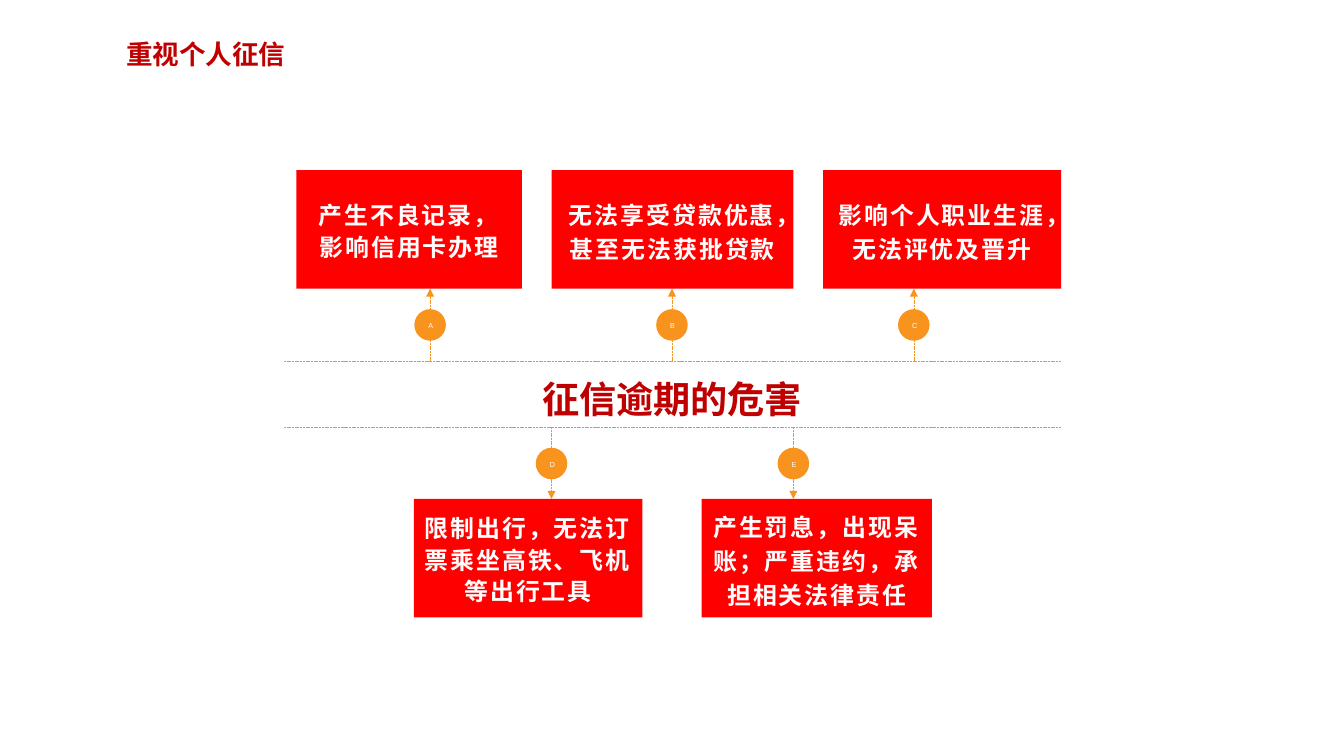
"""Build the slide on the harm of overdue personal credit."""
from dataclasses import dataclass

from lxml import etree
from pptx import Presentation
from pptx import util as u
from pptx.dml.color import RGBColor
from pptx.enum import dml, shapes, text
from pptx.oxml import ns


@dataclass(frozen=True)
class Theme:
    """Colours, fonts and type sizes."""
    heading: RGBColor = RGBColor(0xC0, 0x00, 0x00)
    box: RGBColor = RGBColor(0xFF, 0x00, 0x00)
    accent: RGBColor = RGBColor(0xF8, 0x93, 0x1D)
    white: RGBColor = RGBColor(0xFF, 0xFF, 0xFF)
    chinese: str = "Noto Sans CJK SC"
    latin: str = "Arial"
    title_size: float = 20
    centre_size: float = 28
    box_size: float = 18
    badge_size: float = 5.4


@dataclass(frozen=True)
class Harm:
    """One consequence with its box and badge letter."""
    letter: str
    wording: str
    left: float
    width: float
    line_spacing: float = 1.2


@dataclass(frozen=True)
class Row:
    """A row of harms tied to one rail."""
    rail: float
    arrow_end: float
    badge_centre: float
    box_top: float
    first_stem: float
    harms: tuple[Harm, ...]


THEME = Theme()
RAIL_LEFT, RAIL_RIGHT = 2.97, 11.1
STEM_STEP = 2.53
BOX_HEIGHT = 1.24
BADGE = 0.33
ROWS = (
    Row(3.78, 3.02, 3.4, 1.78, 4.5, (
        Harm("A", "产生不良记录，影响信用卡办理", 3.1, 2.36, 1.1),
        Harm("B", "无法享受贷款优惠，甚至无法获批贷款", 5.77, 2.53),
        Harm("C", "影响个人职业生涯，无法评优及晋升", 8.61, 2.49),
    )),
    Row(4.47, 5.22, 4.85, 5.22, 5.77, (
        Harm("D", "限制出行，无法订票乘坐高铁、飞机等出行工具", 4.33, 2.39, 1.1),
        Harm("E", "产生罚息，出现呆账；严重违约，承担相关法律责任", 7.34, 2.41),
    )),
)


def write(frame, wording: str, *, size: float, color: RGBColor, font: str,
          bold: bool = False, align=text.PP_ALIGN.CENTER,
          line_spacing: float = 1.0, tracking: float = 0) -> None:
    """Write one formatted paragraph into a text frame."""
    frame.word_wrap = True
    para = frame.paragraphs[0]
    para.alignment = align
    para.line_spacing = line_spacing
    span = para.add_run()
    span.text = wording
    span.font.size = u.Pt(size)
    span.font.bold = bold
    span.font.color.rgb = color
    span.font.name = font
    properties = span.font._element
    if tracking:
        properties.set("spc", str(round(tracking * 100)))
    etree.SubElement(properties, ns.qn("a:ea"), typeface=THEME.chinese)


def add_heading(page, wording: str, left: float, top: float, width: float,
                height: float, **style) -> None:
    """Add a bold heading in a text box."""
    box = page.shapes.add_textbox(*map(u.Inches, (left, top, width, height)))
    write(box.text_frame, wording, color=THEME.heading, font=THEME.chinese,
          bold=True, **style)
    box.text_frame.auto_size = text.MSO_AUTO_SIZE.SHAPE_TO_FIT_TEXT


def add_line(page, start: tuple[float, float], end: tuple[float, float],
             arrow: bool = False) -> None:
    """Add a dashed line, with an arrowhead at its end if asked."""
    line = page.shapes.add_connector(
        shapes.MSO_CONNECTOR.STRAIGHT, *map(u.Inches, start + end))
    line.line.color.rgb = THEME.accent
    line.line.width = u.Pt(0.5)
    line.line.dash_style = dml.MSO_LINE.SQUARE_DOT
    if arrow:
        etree.SubElement(line.line._get_or_add_ln(), ns.qn("a:tailEnd"),
                         type="triangle")
    etree.SubElement(line._element.spPr, ns.qn("a:effectLst"))


def add_block(page, kind, fill: RGBColor, wording: str, left: float,
              top: float, width: float, height: float, **style) -> None:
    """Add a filled shape with centred white text."""
    block = page.shapes.add_shape(
        kind, *map(u.Inches, (left, top, width, height)))
    block.shadow.inherit = False
    block.fill.solid()
    block.fill.fore_color.rgb = fill
    block.line.fill.background()
    block.text_frame.vertical_anchor = text.MSO_ANCHOR.MIDDLE
    write(block.text_frame, wording, color=THEME.white, font=THEME.latin,
          **style)


def add_row(page, row: Row) -> None:
    """Add a rail with its stems, boxes and badges."""
    add_line(page, (RAIL_LEFT, row.rail), (RAIL_RIGHT, row.rail))
    for index, harm in enumerate(row.harms):
        stem = row.first_stem + index * STEM_STEP
        add_line(page, (stem, row.rail), (stem, row.arrow_end), arrow=True)
        add_block(page, shapes.MSO_SHAPE.RECTANGLE, THEME.box, harm.wording,
                  harm.left, row.box_top, harm.width, BOX_HEIGHT,
                  size=THEME.box_size, bold=True, tracking=1.5,
                  line_spacing=harm.line_spacing)
        add_block(page, shapes.MSO_SHAPE.OVAL, THEME.accent, harm.letter,
                  stem - BADGE / 2, row.badge_centre - BADGE / 2, BADGE, BADGE,
                  size=THEME.badge_size, line_spacing=1.2)


def main() -> None:
    """Build and save the deck."""
    deck = Presentation()
    deck.slide_width, deck.slide_height = u.Inches(14.06), u.Inches(7.91)
    page = deck.slides.add_slide(deck.slide_layouts[6])
    add_heading(page, "重视个人征信", 1.22, 0.35, 1.88, 0.46,
                size=THEME.title_size, align=text.PP_ALIGN.LEFT)
    for row in ROWS:
        add_row(page, row)
    add_heading(page, "征信逾期的危害", 4.17, 3.89, 5.72, 0.57,
                size=THEME.centre_size)
    deck.save("out.pptx")


if __name__ == "__main__":
    main()
